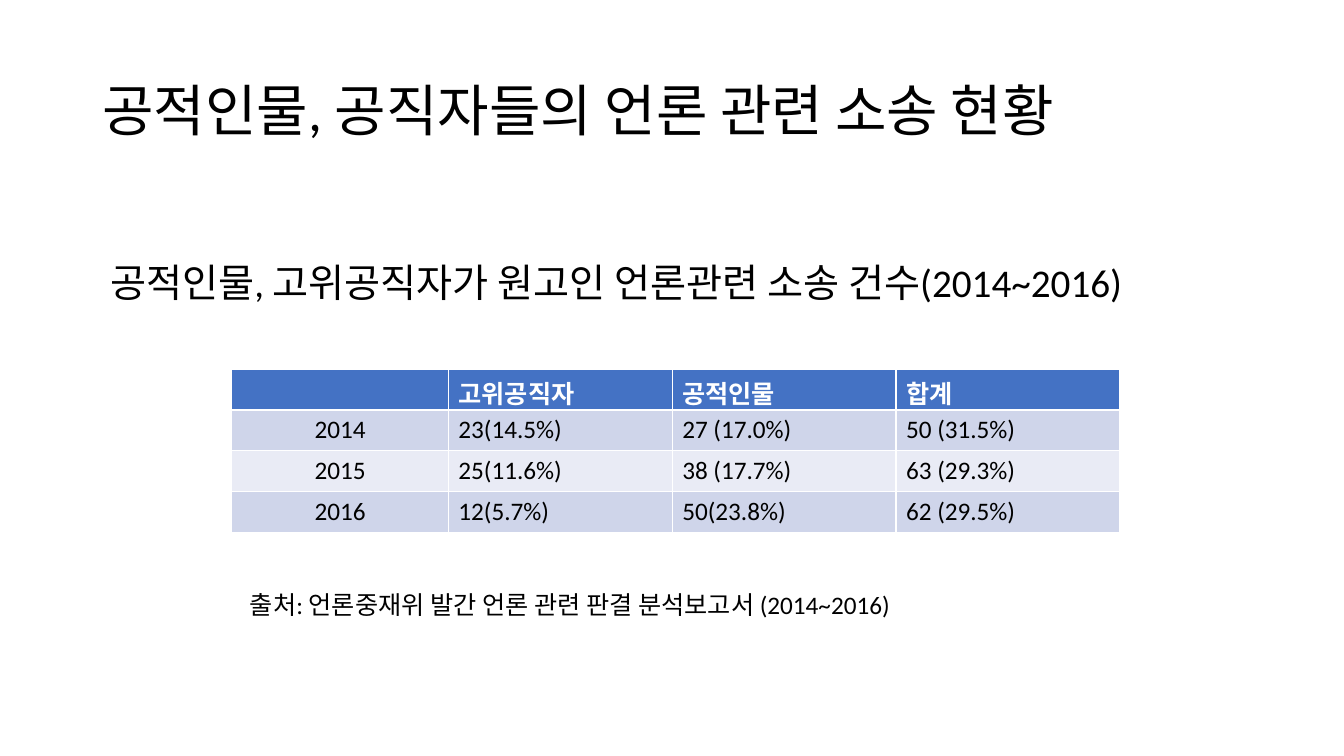
from dataclasses import dataclass

from pptx import Presentation
from pptx.dml.color import RGBColor
from pptx.enum.text import MSO_ANCHOR, PP_ALIGN
from pptx.util import Cm, Pt

TITLE = "공적인물, 공직자들의 언론 관련 소송 현황"
SUBTITLE = "공적인물, 고위공직자가 원고인 언론관련 소송 건수(2014~2016)"
SOURCE = "출처: 언론중재위 발간 언론 관련 판결 분석보고서 (2014~2016)"
LAWSUITS = [
    ("", "고위공직자", "공적인물", "합계"),
    ("2014", "23(14.5%)", "27 (17.0%)", "50 (31.5%)"),
    ("2015", "25(11.6%)", "38 (17.7%)", "63 (29.3%)"),
    ("2016", "12(5.7%)", "50(23.8%)", "62 (29.5%)"),
]


@dataclass(frozen=True)
class Theme:
    font: str = "Calibri"
    title_size: int = 40
    subtitle_size: int = 28
    text_size: int = 18
    black: RGBColor = RGBColor(0x00, 0x00, 0x00)
    white: RGBColor = RGBColor(0xFF, 0xFF, 0xFF)
    header: RGBColor = RGBColor(0x44, 0x72, 0xC4)
    bands: tuple = (RGBColor(0xE9, 0xEB, 0xF5), RGBColor(0xCF, 0xD5, 0xEA))


THEME = Theme()


def style_paragraph(paragraph, size, color=THEME.black, bold=False):
    paragraph.font.name = THEME.font
    paragraph.font.size = Pt(size)
    paragraph.font.color.rgb = color
    paragraph.font.bold = bold


def add_text(slide, text, box, size, anchor=MSO_ANCHOR.TOP, spacing=1.0, inset=(0.25, 0.13)):
    frame = slide.shapes.add_textbox(*map(Cm, box)).text_frame
    frame.word_wrap = True
    frame.vertical_anchor = anchor
    frame.margin_left, frame.margin_top = map(Cm, inset)
    paragraph = frame.paragraphs[0]
    paragraph.text = text
    paragraph.line_spacing = spacing
    style_paragraph(paragraph, size)


def add_lawsuit_table(slide, left, top, year_width, count_width, row_height):
    widths = [year_width] + [count_width] * (len(LAWSUITS[0]) - 1)
    table = slide.shapes.add_table(
        len(LAWSUITS), len(widths), Cm(left), Cm(top),
        Cm(sum(widths)), Cm(row_height * len(LAWSUITS)),
    ).table
    for column, width in zip(table.columns, widths):
        column.width = Cm(width)
    for row_index, values in enumerate(LAWSUITS):
        is_header = row_index == 0
        table.rows[row_index].height = Cm(row_height)
        for column_index, value in enumerate(values):
            cell = table.cell(row_index, column_index)
            cell.fill.solid()
            cell.fill.fore_color.rgb = THEME.header if is_header else THEME.bands[row_index % 2]
            paragraph = cell.text_frame.paragraphs[0]
            paragraph.text = value
            paragraph.alignment = PP_ALIGN.CENTER if column_index == 0 else PP_ALIGN.LEFT
            style_paragraph(paragraph, THEME.text_size,
                            THEME.white if is_header else THEME.black, is_header)


def main():
    presentation = Presentation()
    presentation.slide_width, presentation.slide_height = Cm(33.87), Cm(19.05)
    slide = presentation.slides.add_slide(presentation.slide_layouts[6])
    add_text(slide, TITLE, (2.33, 1.01, 29.21, 3.68), THEME.title_size,
             anchor=MSO_ANCHOR.MIDDLE, spacing=0.9)
    add_text(slide, SUBTITLE, (2.33, 5.07, 29.21, 12.09), THEME.subtitle_size,
             spacing=0.9, inset=(0.45, 1.57))
    add_lawsuit_table(slide, left=5.84, top=9.3, year_width=5.46, count_width=5.64, row_height=1.03)
    add_text(slide, SOURCE, (3.73, 14.73, 25.93, 1.03), THEME.text_size, inset=(2.57, 0.13))
    presentation.save("out.pptx")


if __name__ == "__main__":
    main()
